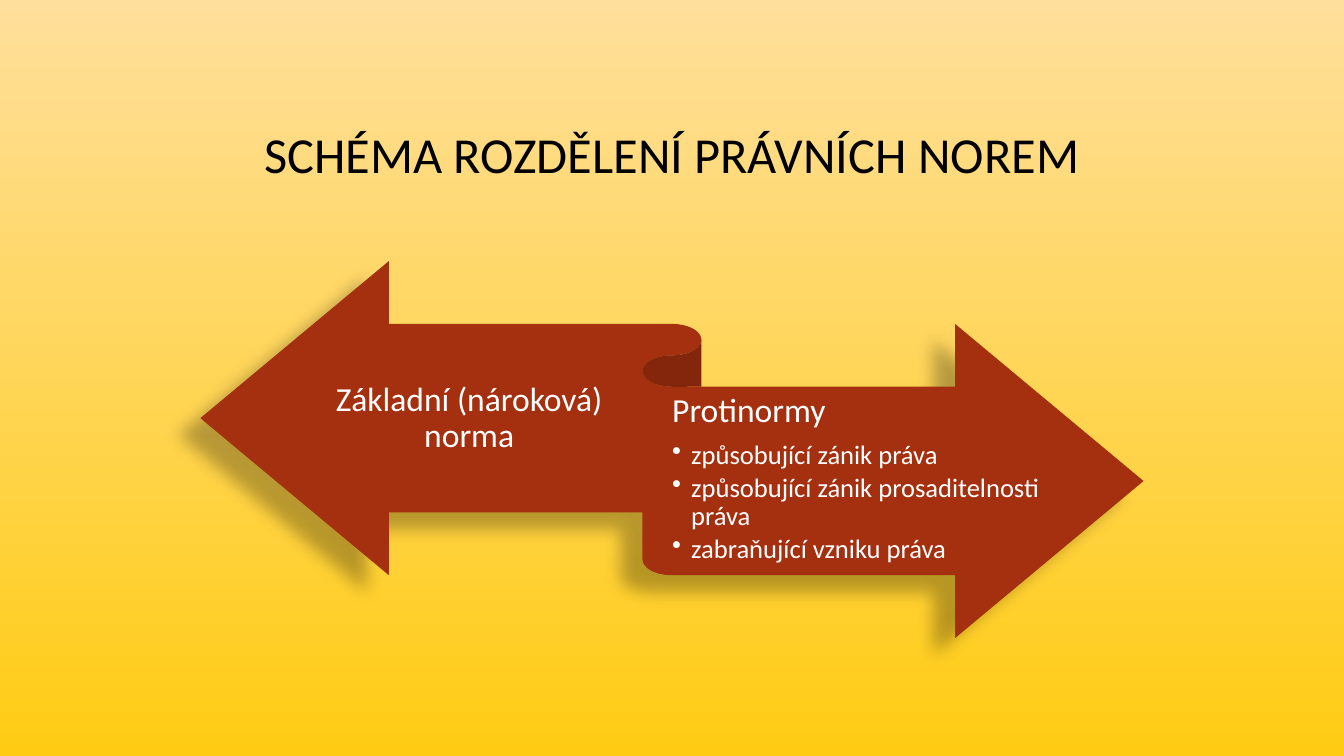
from lxml.etree import SubElement
from pptx import Presentation
from pptx.dml.color import RGBColor
from pptx.enum.shapes import MSO_SHAPE
from pptx.enum.text import MSO_ANCHOR, PP_ALIGN
from pptx.oxml.ns import qn
from pptx.util import Cm, Pt

TITLE = "SCHÉMA ROZDĚLENÍ PRÁVNÍCH NOREM"
BASE = "Základní (nároková) norma"
COUNTER = "Protinormy"
KINDS = [
    "způsobující zánik práva",
    "způsobující zánik prosaditelnosti práva",
    "zabraňující vzniku práva",
]
SKY = ["FFDF9B", "FFCC13"]
RUST, WHITE, BLACK = "A5300F", "FFFFFF", "000000"

# left, top, width, height in cm
HEAD = (2.54, 1.73, 28.79, 4.45)
RIBBON = (5.05, 6.58, 23.77, 9.5)
LEFT = (7.9, 8.23, 7.85, 4.65)
RIGHT = (16.94, 9.75, 9.27, 4.65)
INDENT = Cm(0.48)


def color(code):
    return RGBColor.from_string(code)


def add_box(slide, place, inset=(0, 0.23, 0, 0.25)):
    box = slide.shapes.add_textbox(*map(Cm, place))
    frame = box.text_frame
    frame.word_wrap = True
    frame.vertical_anchor = MSO_ANCHOR.MIDDLE
    (frame.margin_left, frame.margin_top,
     frame.margin_right, frame.margin_bottom) = map(Cm, inset)
    return frame


def write(para, text, size=24, ink=WHITE, align=PP_ALIGN.LEFT, after=0, bullet=False):
    """Fill a paragraph; after is the space below in percent of a line."""
    para.alignment = align
    para.line_spacing = 0.9
    props = para._p.get_or_add_pPr()
    if after:
        space = SubElement(props, qn("a:spcAft"))
        SubElement(space, qn("a:spcPct"), val=str(after * 1000))
    if bullet:
        para.level = 1
        props.set("marL", str(INDENT))
        props.set("indent", str(-INDENT))
        SubElement(props, qn("a:buChar"), char="•")
    run = para.add_run()
    run.text = text
    run.font.name = "Calibri"
    run.font.size = Pt(size)
    run.font.color.rgb = color(ink)


def cast(shape, blur, dist, angle, alpha):
    """Give the shape a soft black outer shadow."""
    shape.shadow.inherit = False
    effects = shape._element.spPr.find(qn("a:effectLst"))
    shade = SubElement(effects, qn("a:outerShdw"), blurRad=str(Pt(blur)),
                       dist=str(Pt(dist)), dir=str(angle * 60000),
                       algn="ctr", rotWithShape="0")
    tint = SubElement(shade, qn("a:srgbClr"), val=BLACK)
    SubElement(tint, qn("a:alpha"), val=str(alpha * 1000))


def main():
    deck = Presentation()
    deck.slide_width, deck.slide_height = Cm(33.87), Cm(19.05)
    slide = deck.slides.add_slide(deck.slide_layouts[6])

    fill = slide.background.fill
    fill.gradient()
    fill.gradient_angle = 270
    for stop, code in zip(fill.gradient_stops, SKY):
        stop.color.rgb = color(code)

    head = add_box(slide, HEAD, (0.25, 0.13, 0.25, 0.13))
    write(head.paragraphs[0], TITLE, size=36, ink=BLACK, align=PP_ALIGN.CENTER)

    ribbon = slide.shapes.add_shape(MSO_SHAPE.LEFT_RIGHT_RIBBON, *map(Cm, RIBBON))
    ribbon.fill.solid()
    ribbon.fill.fore_color.rgb = color(RUST)
    ribbon.line.fill.background()
    cast(ribbon, blur=11.8, dist=19.7, angle=141, alpha=28)

    left = add_box(slide, LEFT)
    write(left.paragraphs[0], BASE, align=PP_ALIGN.CENTER, after=35)

    right = add_box(slide, RIGHT)
    write(right.paragraphs[0], COUNTER, after=35)
    for kind in KINDS:
        write(right.add_paragraph(), kind, size=19, after=15, bullet=True)

    deck.save("out.pptx")


if __name__ == "__main__":
    main()
